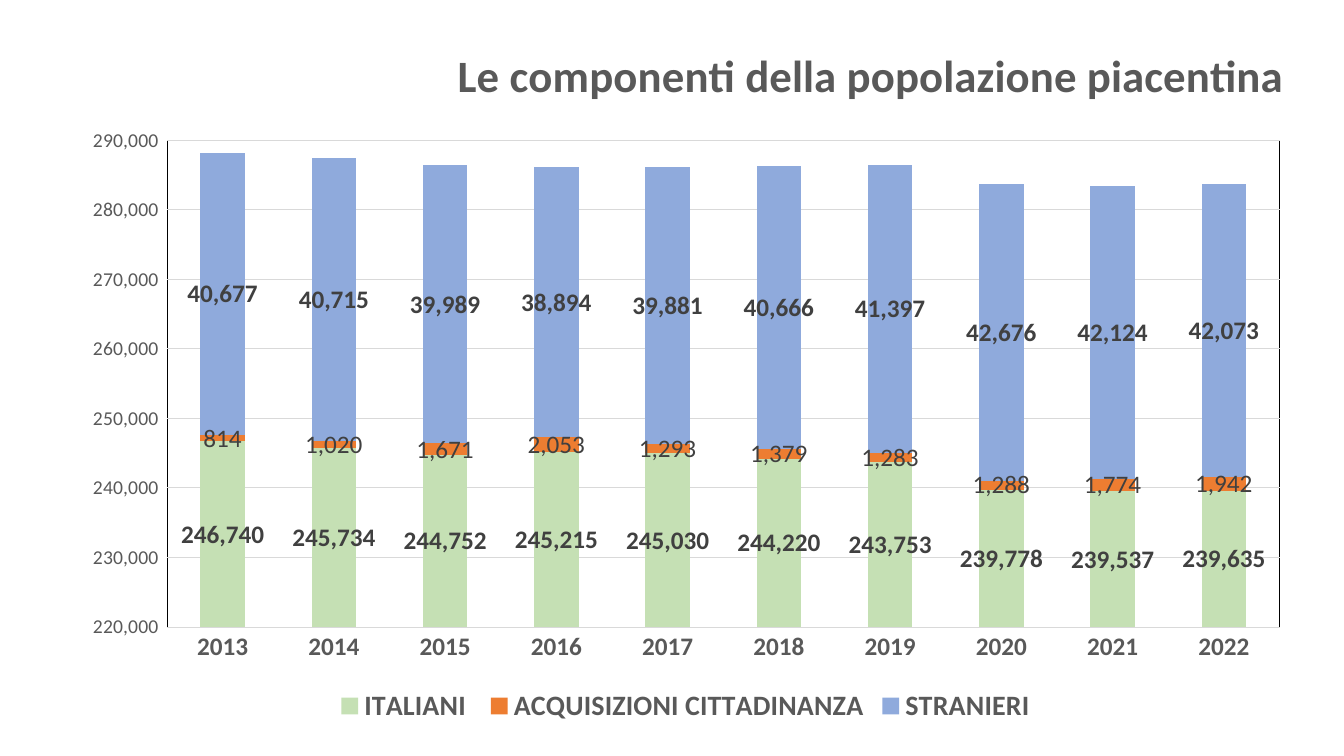
from lxml.etree import SubElement
from pptx import Presentation
from pptx.chart.data import CategoryChartData
from pptx.dml.color import RGBColor
from pptx.enum.chart import XL_CHART_TYPE, XL_LABEL_POSITION, XL_LEGEND_POSITION, XL_TICK_MARK
from pptx.oxml import parse_xml
from pptx.oxml.ns import nsdecls, qn
from pptx.util import Cm, Pt

NUMBER_FORMAT = '_-* #,##0_-;\\-* #,##0_-;_-* "-"??_-;_-@_-'
YEARS = [str(year) for year in range(2013, 2023)]
POPULATION = [
    ("ITALIANI ", "C5E0B4", True,
     [246740, 245734, 244752, 245215, 245030, 244220, 243753, 239778, 239537, 239635]),
    ("ACQUISIZIONI CITTADINANZA", "ED7D31", False,
     [814, 1020, 1671, 2053, 1293, 1379, 1283, 1288, 1774, 1942]),
    ("STRANIERI", "8FAADC", True,
     [40677, 40715, 39989, 38894, 39881, 40666, 41397, 42676, 42124, 42073]),
]


def color(value):
    return RGBColor.from_string(value)


class PopulationSlide:
    """Holds the style and the page of the population chart."""

    font_name = "Calibri"
    text_color = "595959"
    label_color = "404040"
    grid_color = "D9D9D9"

    def __init__(self, deck):
        self.page = deck.slides.add_slide(deck.slide_layouts[6])

    def style_font(self, font, size, bold=False, hex_color=None):
        font.name = self.font_name
        font.size = Pt(size)
        font.bold = bold
        font.color.rgb = color(hex_color or self.text_color)

    def style_line(self, line):
        line.color.rgb = color(self.grid_color)
        line.width = Pt(0.75)

    def place(self, parent, **fractions):
        layout = parent.find(qn("c:layout"))
        if layout is None:
            layout = parse_xml(f"<c:layout {nsdecls('c')}/>")
            parent.insert(0, layout)
        manual = SubElement(layout, qn("c:manualLayout"))
        if "w" in fractions:
            SubElement(manual, qn("c:layoutTarget")).set("val", "inner")
        for side in ("x", "y"):
            SubElement(manual, qn(f"c:{side}Mode")).set("val", "edge")
        for side, fraction in fractions.items():
            SubElement(manual, qn(f"c:{side}")).set("val", str(fraction))

    def add_chart(self, left, top, width, height):
        data = CategoryChartData(number_format=NUMBER_FORMAT)
        data.categories = YEARS
        for name, _, _, values in POPULATION:
            data.add_series(name, values)
        frame = self.page.shapes.add_chart(
            XL_CHART_TYPE.COLUMN_STACKED, Cm(left), Cm(top), Cm(width), Cm(height), data)
        chart = frame.chart
        self.style_font(chart.font, 10, hex_color="000000")
        return chart

    def add_title(self, chart, text):
        chart.has_title = True
        title = chart.chart_title
        title.include_in_layout = False
        para = title.text_frame.paragraphs[0]
        para.text = text
        self.style_font(para.font, 32, True)
        self.place(title._element, x=0.31, y=0.01)

    def style_plot(self, chart):
        plot = chart.plots[0]
        plot.gap_width = 150
        plot.overlap = 100
        plot.vary_by_categories = False
        for series, (_, fill, bold, _) in zip(plot.series, POPULATION):
            series.format.fill.solid()
            series.format.fill.fore_color.rgb = color(fill)
            labels = series.data_labels
            labels.show_value = True
            labels.position = XL_LABEL_POSITION.CENTER
            self.style_font(labels.font, 18, bold, self.label_color)
        area = chart._chartSpace.chart.plotArea
        self.place(area, x=0.0825, y=0.1585, w=0.896, h=0.696)
        area.append(parse_xml(
            f'<c:spPr {nsdecls("c", "a")}><a:noFill/><a:ln w="0"><a:solidFill>'
            '<a:srgbClr val="000000"/></a:solidFill></a:ln></c:spPr>'))

    def style_axes(self, chart):
        years, people = chart.category_axis, chart.value_axis
        for axis in (years, people):
            axis.major_tick_mark = axis.minor_tick_mark = XL_TICK_MARK.NONE
        self.style_font(years.tick_labels.font, 18, True)
        self.style_line(years.format.line)
        self.style_font(people.tick_labels.font, 14)
        people.tick_labels.number_format = NUMBER_FORMAT
        people.tick_labels.number_format_is_linked = False
        people.minimum_scale, people.maximum_scale = 220000, 290000
        people.major_unit = 10000
        people.format.line.fill.background()
        self.style_line(people.major_gridlines.format.line)

    def add_legend(self, chart):
        chart.has_legend = True
        chart.legend.position = XL_LEGEND_POSITION.BOTTOM
        chart.legend.include_in_layout = False
        self.style_font(chart.legend.font, 20, True)


def main():
    deck = Presentation()
    deck.slide_width, deck.slide_height = Cm(33.87), Cm(19.05)
    slide = PopulationSlide(deck)
    chart = slide.add_chart(1.63, 0.74, 31.29, 17.63)
    slide.add_title(chart, "Le componenti della popolazione piacentina")
    slide.style_plot(chart)
    slide.style_axes(chart)
    slide.add_legend(chart)
    deck.save("out.pptx")


if __name__ == "__main__":
    main()
